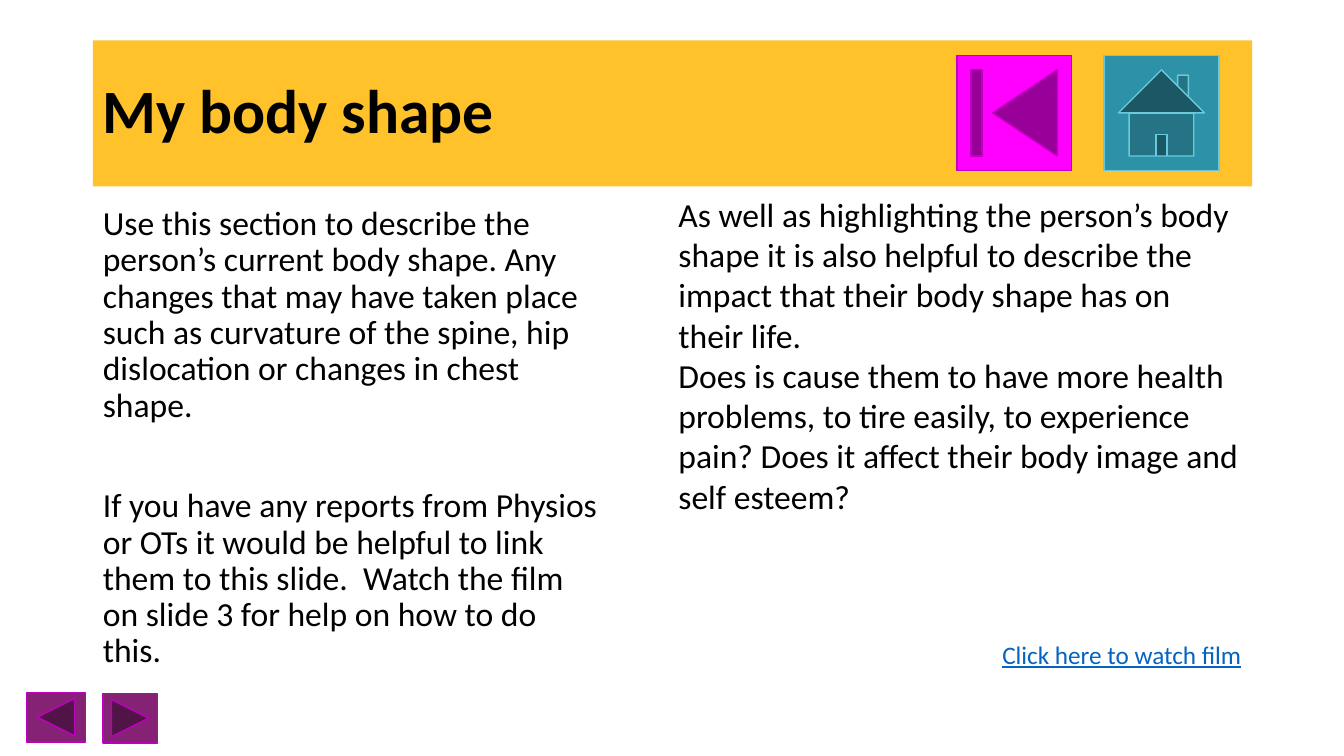
"""Build the "My body shape" slide with its navigation buttons."""
from pptx import Presentation
from pptx.dml.color import RGBColor
from pptx.enum.shapes import MSO_SHAPE
from pptx.enum.text import MSO_ANCHOR, MSO_AUTO_SIZE, PP_ALIGN
from pptx.oxml.ns import qn
from pptx.util import Inches, Pt

LEFT, RIGHT = PP_ALIGN.LEFT, PP_ALIGN.RIGHT
TOP, MIDDLE = MSO_ANCHOR.TOP, MSO_ANCHOR.MIDDLE
NO_AUTOFIT = MSO_AUTO_SIZE.NONE
HOME = MSO_SHAPE.ACTION_BUTTON_HOME
BEGINNING = MSO_SHAPE.ACTION_BUTTON_BEGINNING
PREVIOUS = MSO_SHAPE.ACTION_BUTTON_BACK_OR_PREVIOUS
NEXT = MSO_SHAPE.ACTION_BUTTON_FORWARD_OR_NEXT


def rgb(value):
    return RGBColor.from_string(value)


def write(paragraph, text, size=24, color="000000", bold=False, underline=False,
          align=LEFT, spacing=1.0, before=0):
    properties = paragraph._p.get_or_add_pPr()
    properties.set("marL", "0")
    properties.set("indent", "0")
    properties.append(properties.makeelement(qn("a:buNone"), {}))
    paragraph.alignment = align
    paragraph.line_spacing = spacing
    paragraph.space_before = Pt(before)
    run = paragraph.add_run()
    run.text = text
    run.font.name = "Calibri"
    run.font.size = Pt(size)
    run.font.bold = bold
    run.font.underline = underline
    run.font.color.rgb = rgb(color)


prs = Presentation()
prs.slide_width, prs.slide_height = Inches(13.33), Inches(7.5)
slide = prs.slides.add_slide(prs.slide_layouts[1])

heading = slide.shapes.title
guidance = slide.placeholders[1]
impact = slide.shapes.add_textbox(Inches(6.63), Inches(1.87), Inches(5.78), Inches(5.62))

heading.left, heading.top = Inches(0.92), Inches(0.4)
heading.width, heading.height = Inches(11.5), Inches(1.45)
heading.fill.solid()
heading.fill.fore_color.rgb = rgb("FFC22B")

guidance.left, guidance.top = Inches(0.92), Inches(2)
guidance.width, guidance.height = Inches(5.14), Inches(4.76)

for part, anchor in ((heading, MIDDLE), (guidance, TOP), (impact, TOP)):
    part.text_frame.word_wrap = True
    part.text_frame.auto_size = NO_AUTOFIT
    part.text_frame.vertical_anchor = anchor

write(heading.text_frame.paragraphs[0], "My body shape", size=44, bold=True, spacing=0.9)

write(guidance.text_frame.paragraphs[0],
      "Use this section to describe the person’s current body shape. Any changes that "
      "may have taken place such as curvature of the spine, hip dislocation or changes "
      "in chest shape.", spacing=0.9)
write(guidance.text_frame.add_paragraph(),
      "If you have any reports from Physios or OTs it would be helpful to link them to "
      "this slide.  Watch the film on slide 3 for help on how to do this.",
      spacing=0.9, before=46)

write(impact.text_frame.paragraphs[0],
      "As well as highlighting the person’s body shape it is also helpful to describe "
      "the impact that their body shape has on their life.")
write(impact.text_frame.add_paragraph(),
      "Does is cause them to have more health problems, to tire easily, to experience "
      "pain? Does it affect their body image and self esteem?")
write(impact.text_frame.add_paragraph(), "Click here to watch film",
      size=18, color="0563C1", underline=True, align=RIGHT, before=88)

navigation = (
    (HOME, 10.95, 0.55, 1.14, 1.14, "2D92A8", "68CADC"),
    (BEGINNING, 9.49, 0.55, 1.14, 1.14, "FF00FF", "BD00BD"),
    (PREVIOUS, 0.26, 6.87, 0.59, 0.49, "862275", "BD00BD"),
    (NEXT, 1.02, 6.88, 0.54, 0.49, "862275", "BD00BD"),
)
for action, left, top, width, height, fill, outline in navigation:
    button = slide.shapes.add_shape(action, Inches(left), Inches(top),
                                    Inches(width), Inches(height))
    button.shadow.inherit = False
    button.fill.solid()
    button.fill.fore_color.rgb = rgb(fill)
    button.line.color.rgb = rgb(outline)
    button.line.width = Pt(1)

prs.save("out.pptx")
